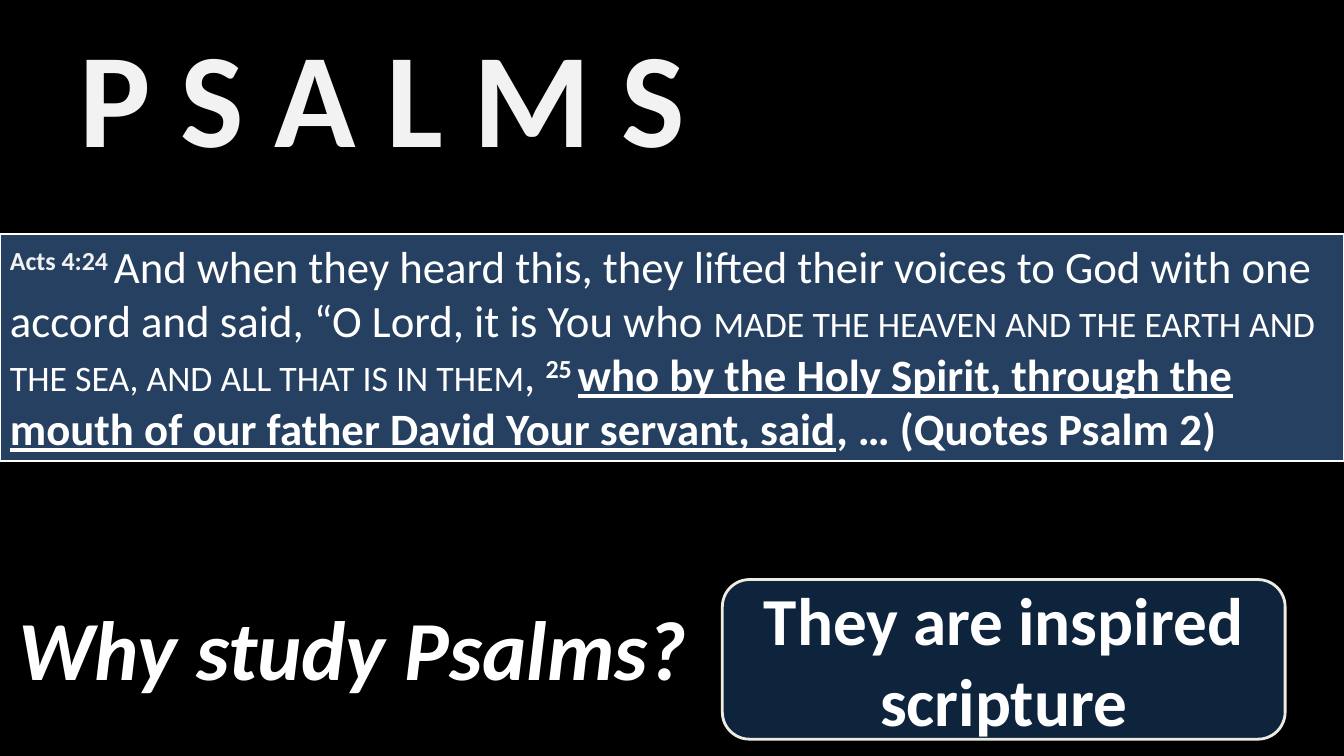
from lxml.etree import SubElement
from pptx import Presentation
from pptx.dml.color import RGBColor
from pptx.enum.shapes import MSO_SHAPE
from pptx.enum.text import MSO_ANCHOR, MSO_AUTO_SIZE, PP_ALIGN
from pptx.oxml.ns import qn
from pptx.util import Emu, Pt

PIXEL = 9525
BLACK = RGBColor(0x00, 0x00, 0x00)
WHITE = RGBColor(0xFF, 0xFF, 0xFF)
PALE = RGBColor(0xF2, 0xF2, 0xF2)
CREAM = RGBColor(0xEE, 0xEC, 0xE1)
NAVY = RGBColor(0x17, 0x37, 0x5E)
BLUE = RGBColor(0x25, 0x40, 0x61)

VERSE = [
    ("Acts 4:24 ", {"color": PALE, "bold": True, "raised": True}),
    ("And when they heard this, they lifted their voices to God with one accord "
     "and said, “O Lord, it is You who ", {}),
    ("made the heaven and the earth and the sea, and all that is in them", {"small_caps": True}),
    (", ", {}),
    ("25 ", {"bold": True, "raised": True}),
    ("who by the Holy Spirit, through the mouth of our father David Your servant, said",
     {"bold": True, "underline": True}),
    (", … (Quotes Psalm 2)", {"bold": True}),
]


class PsalmsSlide:
    font_name = "Calibri"

    def __init__(self, deck):
        self.page = deck.slides.add_slide(deck.slide_layouts[5])
        fill = self.page.background.fill
        fill.solid()
        fill.fore_color.rgb = BLACK

    def set_text(self, box, spans, size, align, anchor):
        frame = box.text_frame
        frame.word_wrap = True
        frame.auto_size = MSO_AUTO_SIZE.NONE
        frame.vertical_anchor = anchor
        para = frame.paragraphs[0]
        para.alignment = align
        for text, look in spans:
            span = para.add_run()
            span.text = text
            self.style(span, size, **look)

    def style(self, span, size, color=WHITE, bold=False, italic=False,
              underline=False, raised=False, small_caps=False):
        font = span.font
        font.name = self.font_name
        font.size = Pt(size)
        font.color.rgb = color
        font.bold = bold
        font.italic = italic
        font.underline = underline
        properties = span._r.get_or_add_rPr()
        if raised:
            properties.set("baseline", "30000")
        if small_caps:
            properties.set("cap", "small")

    def title(self, area, text, size, **look):
        box = self.page.shapes.title
        box.left, box.top, box.width, box.height = (Emu(n * PIXEL) for n in area)
        self.set_text(box, [(text, look)], size, PP_ALIGN.CENTER, MSO_ANCHOR.MIDDLE)

    def panel(self, kind, area, fill=None, line=None, weight=0, opacity=100):
        box = self.page.shapes.add_shape(kind, *(Emu(n * PIXEL) for n in area))
        box.shadow.inherit = False
        if fill is None:
            box.fill.background()
        else:
            box.fill.solid()
            box.fill.fore_color.rgb = fill
        if opacity < 100:
            color = box._element.spPr.find(qn("a:solidFill"))[0]
            SubElement(color, qn("a:alpha")).set("val", str(opacity * 1000))
        if line is None:
            box.line.fill.background()
        else:
            box.line.color.rgb = line
            box.line.width = Pt(weight)
        return box

    def callout(self, area, text, size, italic=False, **panel_style):
        box = self.panel(MSO_SHAPE.ROUNDED_RECTANGULAR_CALLOUT, area, **panel_style)
        for index, value in enumerate((-0.22, 0.5, 0.17)):
            box.adjustments[index] = value
        look = {"bold": True, "italic": italic}
        self.set_text(box, [(text, look)], size, PP_ALIGN.CENTER, MSO_ANCHOR.MIDDLE)

    def quotation(self, area, spans, size, **panel_style):
        box = self.panel(MSO_SHAPE.RECTANGLE, area, **panel_style)
        self.set_text(box, spans, size, PP_ALIGN.LEFT, MSO_ANCHOR.TOP)


def main():
    deck = Presentation()
    deck.slide_width = Emu(1280 * PIXEL)
    deck.slide_height = Emu(720 * PIXEL)
    slide = PsalmsSlide(deck)
    slide.title((0, 29, 728, 120), "P S A L M S", 96, color=PALE, bold=True)
    slide.callout((0, 552, 672, 128), "Why study Psalms?", 60, italic=True)
    slide.callout((688, 552, 536, 152), "They are inspired scripture", 48,
                  fill=NAVY, opacity=64, line=CREAM, weight=2)
    slide.quotation((0, 223, 1280, 216), VERSE, 32, fill=BLUE, line=WHITE, weight=1.5)
    deck.save("out.pptx")


if __name__ == "__main__":
    main()
